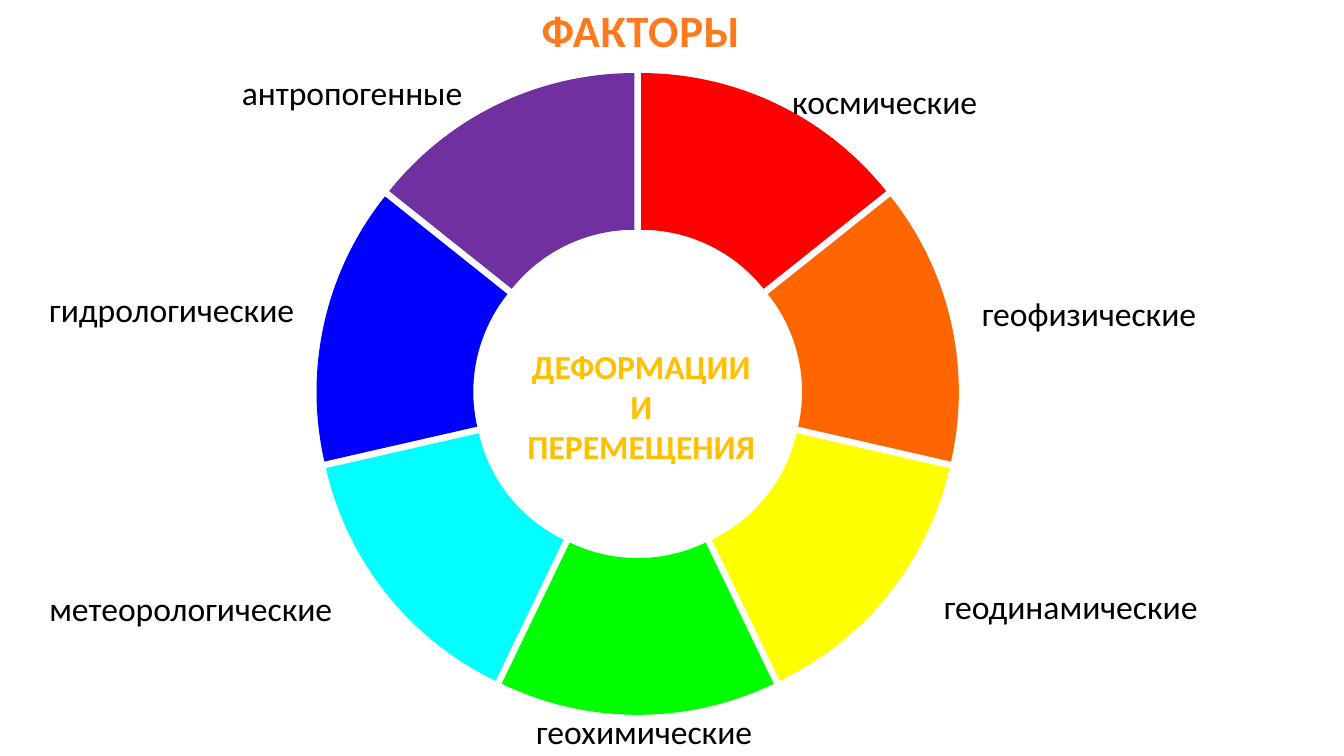
from lxml import etree
from pptx import Presentation
from pptx.chart.data import CategoryChartData
from pptx.dml.color import RGBColor
from pptx.enum.chart import XL_CHART_TYPE as ChartType
from pptx.enum.text import MSO_ANCHOR as Anchor, MSO_AUTO_SIZE as AutoSize, PP_ALIGN as Align
from pptx.oxml.ns import qn
from pptx.util import Inches, Pt

FONT = "Calibri"
SECTOR_COLORS = ["FF0000", "FF6600", "FFFF00", "00FF00", "00FFFF", "0000FF", "7030A0"]
FACTORS = [
    ("антропогенные", 2.3, 0.66, 2.9, Align.LEFT),
    ("космические", 7.27, 0.75, 3.01, Align.CENTER),
    ("геодинамические", 8.75, 5.76, 3.74, Align.CENTER),
    ("геофизические", 9.64, 2.86, 2.85, Align.LEFT),
    ("геохимические", 5.22, 7, 2.9, Align.LEFT),
    ("гидрологические", 0.39, 2.82, 3.07, Align.LEFT),
    ("метеорологические", 0.39, 5.78, 3.68, Align.LEFT),
]


def rgb(color):
    return RGBColor.from_string(color)


def fill_text(shape, lines, size, color, align, bold=False):
    text_frame = shape.text_frame
    text_frame.text = "\n".join(lines)
    text_frame.word_wrap = True
    text_frame.auto_size = AutoSize.SHAPE_TO_FIT_TEXT
    text_frame.vertical_anchor = Anchor.TOP
    for paragraph in text_frame.paragraphs:
        paragraph.alignment = align
        for run in paragraph.runs:
            run.font.name = FONT
            run.font.size = Pt(size)
            run.font.bold = bold
            run.font.color.rgb = rgb(color)


def add_label(slide, lines, left, top, width, height, color="000000", align=Align.LEFT, bold=False):
    box = slide.shapes.add_textbox(Inches(left), Inches(top), Inches(width), Inches(height))
    fill_text(box, lines, 24, color, align, bold)


def set_title(slide, text):
    title = slide.shapes.title
    title.left, title.top = Inches(4.98), Inches(-0.02)
    title.width, title.height = Inches(2.75), Inches(0.64)
    fill_text(title, [text], 32, "FF7A1F", Align.CENTER, bold=True)
    run = title.text_frame.paragraphs[0].runs[0]
    run.font._element.set("spc", "50")


def add_factor_ring(slide):
    data = CategoryChartData()
    data.categories = [str(number) for number in range(1, len(SECTOR_COLORS) + 1)]
    data.add_series("Series 1", [14] * len(SECTOR_COLORS))
    chart = slide.shapes.add_chart(
        ChartType.DOUGHNUT, Inches(-0.68), Inches(0.58), Inches(14.01), Inches(6.65), data
    ).chart
    chart.has_legend = False
    chart.has_title = False
    chart.font.name = FONT
    chart.font.size = Pt(10)
    chart.font.color.rgb = rgb("000000")

    plot = chart.plots[0]
    plot.vary_by_categories = True
    series = plot.series[0]
    explosion = etree.Element(qn("c:explosion"), val="5")
    series._element.find(qn("c:tx")).addnext(explosion)
    for index, color in enumerate(SECTOR_COLORS):
        sector = series.points[index].format
        sector.fill.solid()
        sector.fill.fore_color.rgb = rgb(color)
        sector.line.fill.background()


def main():
    presentation = Presentation()
    presentation.slide_width = Inches(13.33)
    presentation.slide_height = Inches(7.5)
    slide = presentation.slides.add_slide(presentation.slide_layouts.get_by_name("Title Only"))

    set_title(slide, "ФАКТОРЫ")
    add_factor_ring(slide)
    for name, left, top, width, align in FACTORS:
        add_label(slide, [name], left, top, width, 0.5, align=align)
    add_label(slide, ["ДЕФОРМАЦИИ", "И", "ПЕРЕМЕЩЕНИЯ"], 4.6, 3.38, 3.52, 1.31,
              color="FFC000", align=Align.CENTER, bold=True)
    presentation.save("out.pptx")


if __name__ == "__main__":
    main()
